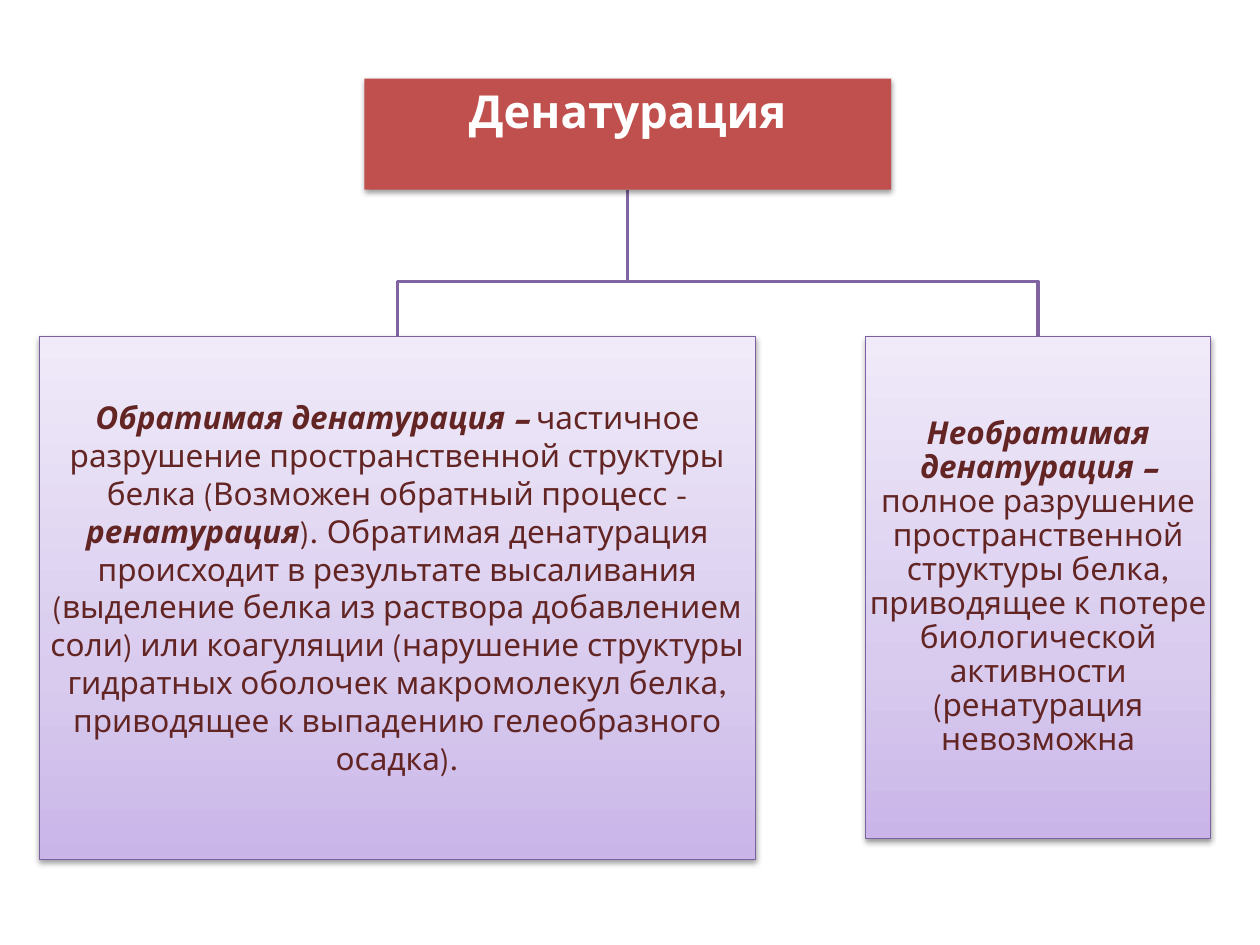
from lxml import etree
from copy import deepcopy

from pptx import Presentation
from pptx.dml.color import RGBColor
from pptx.enum.shapes import MSO_SHAPE
from pptx.enum.text import MSO_ANCHOR, PP_ALIGN
from pptx.oxml.ns import qn
from pptx.util import Inches, Pt

RECTANGLE = MSO_SHAPE.RECTANGLE
MIDDLE = MSO_ANCHOR.MIDDLE
CENTER = PP_ALIGN.CENTER

SLIDE_WIDTH, SLIDE_HEIGHT = Inches(10), Inches(7.5)
FONT = "League Spartan"
CARD_GRADIENT = [(0, "C9B5E8"), (0.35, "D8CBEE"), (1, "F0EAF9")]

# Boxes as left, top, width, height in percent of the slide
TITLE_BOX = (28.92, 8.33, 41.8, 11.75)
REVERSIBLE_BOX = (3.14, 35.63, 56.8, 55.33)
IRREVERSIBLE_BOX = (68.7, 35.63, 27.4, 53.1)
BRANCH_HEIGHT = 29.8

TITLE_FORMAT = {"size": Pt(26), "bold": True}
TERM_FORMAT = {"size": Pt(18), "bold": True, "italic": True}
BODY_FORMAT = {"size": Pt(18), "bold": False, "italic": False}

REVERSIBLE_TEXT = [
    ("Обратимая денатурация – ", TERM_FORMAT),
    ("частичное разрушение пространственной структуры белка "
     "(Возможен обратный процесс - ", BODY_FORMAT),
    ("ренатурация", TERM_FORMAT),
    ("). Обратимая денатурация происходит в результате высаливания "
     "(выделение белка из раствора добавлением соли) или коагуляции "
     "(нарушение структуры гидратных оболочек макромолекул белка, "
     "приводящее к выпадению гелеобразного осадка).", BODY_FORMAT),
]
IRREVERSIBLE_TEXT = [
    ("Необратимая денатурация – ", TERM_FORMAT),
    ("полное разрушение пространственной структуры белка, приводящее "
     "к потере биологической активности (ренатурация невозможна",
     BODY_FORMAT),
]


def color(value):
    return RGBColor.from_string(value)


def across(percent):
    return round(SLIDE_WIDTH * percent / 100)


def down(percent):
    return round(SLIDE_HEIGHT * percent / 100)


def add_shadow(shape):
    shape.shadow.inherit = False
    effects = shape._element.spPr.find(qn("a:effectLst"))
    shadow = etree.SubElement(effects, qn("a:outerShdw"), {
        "blurRad": str(Pt(3.1)), "dist": str(Pt(1.6)),
        "dir": "5400000", "rotWithShape": "0"})
    black = etree.SubElement(shadow, qn("a:srgbClr"), val="000000")
    etree.SubElement(black, qn("a:alpha"), val="38000")


def add_box(slide, box, runs, text_color, inset, bottom_inset, spacing=1.0):
    """Place a shadowed rectangle with centred text."""
    left, top, width, height = box
    shape = slide.shapes.add_shape(
        RECTANGLE, across(left), down(top), across(width), down(height))
    add_shadow(shape)
    frame_format = {
        "word_wrap": True, "vertical_anchor": MIDDLE,
        "margin_left": Inches(inset), "margin_right": Inches(inset),
        "margin_top": Inches(inset), "margin_bottom": Inches(bottom_inset)}
    for name, value in frame_format.items():
        setattr(shape.text_frame, name, value)
    paragraph = shape.text_frame.paragraphs[0]
    paragraph.alignment = CENTER
    paragraph.line_spacing = spacing
    for text, run_format in runs:
        run = paragraph.add_run()
        run.text = text
        run.font.name = FONT
        run.font.color.rgb = color(text_color)
        for name, value in run_format.items():
            setattr(run.font, name, value)
    return shape


def add_title(slide, box):
    shape = add_box(slide, box, [("Денатурация", TITLE_FORMAT)],
                    "FFFFFF", 0.02, 0.4)
    shape.fill.solid()
    shape.fill.fore_color.rgb = color("C0504D")
    shape.line.fill.background()


def add_card(slide, box, runs, bottom_inset, spacing):
    shape = add_box(slide, box, runs, "632523", 0.01, bottom_inset, spacing)
    shape.fill.gradient()
    shape.fill.gradient_angle = 90
    # The default gradient has two stops; add the third
    stop_list = shape._element.spPr.find(qn("a:gradFill")).find(qn("a:gsLst"))
    stop_list.append(deepcopy(stop_list[0]))
    for stop, (position, value) in zip(shape.fill.gradient_stops, CARD_GRADIENT):
        stop.position = position
        stop.color.rgb = color(value)
    shape.line.color.rgb = color("7D60A0")
    shape.line.width = Pt(0.75)


def add_branch(slide, parent_box, child_box):
    """Draw a bent line from the parent's bottom to the child's top."""
    parent_left, parent_top, parent_width, parent_height = parent_box
    child_left, child_top, child_width, _ = child_box
    start_x = across(parent_left + parent_width / 2)
    end_x = across(child_left + child_width / 2)
    level = down(BRANCH_HEIGHT)
    builder = slide.shapes.build_freeform(
        start_x, down(parent_top + parent_height))
    builder.add_line_segments(
        [(start_x, level), (end_x, level), (end_x, down(child_top))],
        close=False)
    branch = builder.convert_to_shape()
    branch.shadow.inherit = False
    branch.fill.background()
    branch.line.color.rgb = color("8064A2")
    branch.line.width = Pt(2)


def main():
    presentation = Presentation()
    presentation.slide_width = SLIDE_WIDTH
    presentation.slide_height = SLIDE_HEIGHT
    slide = presentation.slides.add_slide(presentation.slide_layouts[6])

    # Branches lie behind the boxes
    for child_box in (IRREVERSIBLE_BOX, REVERSIBLE_BOX):
        add_branch(slide, TITLE_BOX, child_box)
    add_title(slide, TITLE_BOX)
    add_card(slide, REVERSIBLE_BOX, REVERSIBLE_TEXT, 0.18, 1.0)
    add_card(slide, IRREVERSIBLE_BOX, IRREVERSIBLE_TEXT, 0.01, 0.9)
    presentation.save("out.pptx")


if __name__ == "__main__":
    main()
